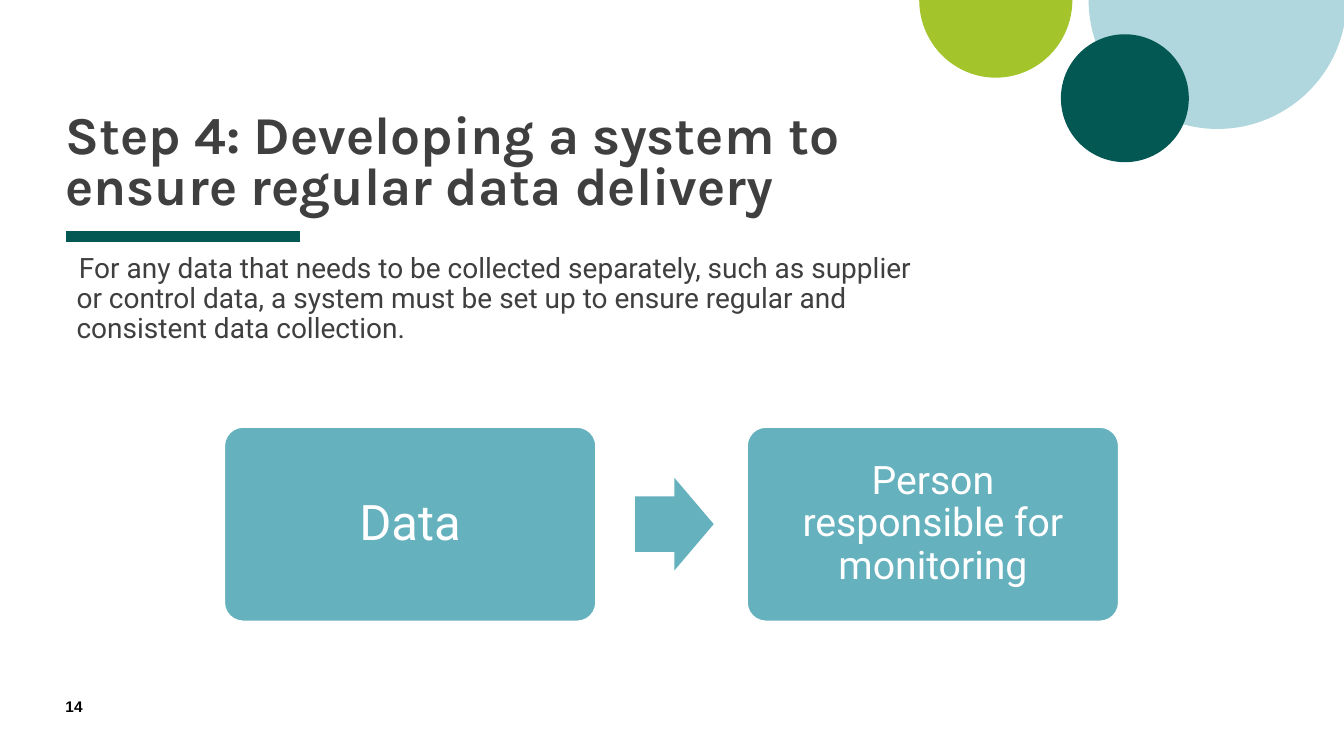
from lxml.etree import SubElement
from pptx import Presentation
from pptx.dml.color import RGBColor
from pptx.enum.shapes import MSO_CONNECTOR, MSO_SHAPE
from pptx.enum.text import MSO_ANCHOR, PP_ALIGN
from pptx.oxml.ns import qn
from pptx.util import Pt

COLORS = {"teal": "035854", "sky": "AFD7DD", "lime": "A3C42A", "box": "65B1BE",
          "text": "3F3F3F", "white": "FFFFFF", "black": "000000"}


def write(s, text, size, color, font="Roboto", bold=False, align=PP_ALIGN.LEFT,
          anchor=MSO_ANCHOR.TOP, inset=0, top=0, spacing=1.0):
    tf = s.text_frame
    tf.word_wrap = True
    tf.vertical_anchor = anchor
    tf.margin_left = tf.margin_right = tf.margin_bottom = Pt(inset)
    tf.margin_top = Pt(top or inset)
    p = tf.paragraphs[0]
    p.text = text
    p.alignment = align
    p.line_spacing = spacing
    p.font.name = font
    p.font.size = Pt(size)
    p.font.bold = bold
    p.font.color.rgb = RGBColor.from_string(COLORS[color])
    return p


def add_shape(kind, left, top, width, height, color, adjustments=()):
    s = slide.shapes.add_shape(kind, Pt(left), Pt(top), Pt(width), Pt(height))
    s.shadow.inherit = False
    s.fill.solid()
    s.fill.fore_color.rgb = RGBColor.from_string(COLORS[color])
    s.line.fill.background()
    for i, value in enumerate(adjustments):
        s.adjustments[i] = value
    return s


prs = Presentation()
prs.slide_width = Pt(960)
prs.slide_height = Pt(540)
slide = prs.slides.add_slide(prs.slide_layouts[6])

rule = slide.shapes.add_connector(MSO_CONNECTOR.STRAIGHT, Pt(46.8), Pt(169.2), Pt(214.6), Pt(169.2))
rule.line.color.rgb = RGBColor.from_string(COLORS["teal"])
rule.line.width = Pt(8)
SubElement(rule.element.spPr, qn("a:effectLst"))

add_shape(MSO_SHAPE.PIE, 777.6, -92.2, 184.3, 184.3, "sky", (0, 108))
add_shape(MSO_SHAPE.PIE, 656.6, -55.4, 109.4, 110.9, "lime", (0, 108))
add_shape(MSO_SHAPE.OVAL, 757.8, 24.5, 91.4, 91.4, "teal")

title = slide.shapes.add_textbox(Pt(46.8), Pt(36.7), Pt(849.6), Pt(117.4))
write(title, "Step 4: Developing a system to \vensure regular data delivery", 38, "text",
      font="Karla", bold=True, anchor=MSO_ANCHOR.BOTTOM, spacing=0.8)

body = slide.shapes.add_textbox(Pt(18.7), Pt(177.8), Pt(648), Pt(139.7))
p = write(body, "For any data that needs to be collected separately, such as supplier or control data, "
          "a system must be set up to ensure regular and consistent data collection.",
          20, "text", top=3.6, spacing=0.9)
pPr = p._p.get_or_add_pPr()
pPr.set("marL", str(Pt(36)))
pPr.set("indent", str(Pt(1.7)))

number = slide.shapes.add_textbox(Pt(46.8), Pt(498.2), Pt(41), Pt(19.4))
write(number, "14", 11, "black", font="Arial", bold=True)

for i, (text, size) in enumerate([("Data", 35), ("Person responsible for monitoring", 28)]):
    s = add_shape(MSO_SHAPE.ROUNDED_RECTANGLE, 159.8 + i * 373.4, 304.6, 266.4, 139.7, "box", (0.1,))
    s.line.color.rgb = RGBColor.from_string(COLORS["white"])
    s.line.width = Pt(2)
    write(s, text, size, "white", align=PP_ALIGN.CENTER, anchor=MSO_ANCHOR.MIDDLE,
          inset=14.8, spacing=0.9)

add_shape(MSO_SHAPE.RIGHT_ARROW, 453.6, 341.3, 56.2, 66.2, "box", (0.6, 0.5))

prs.save("out.pptx")
